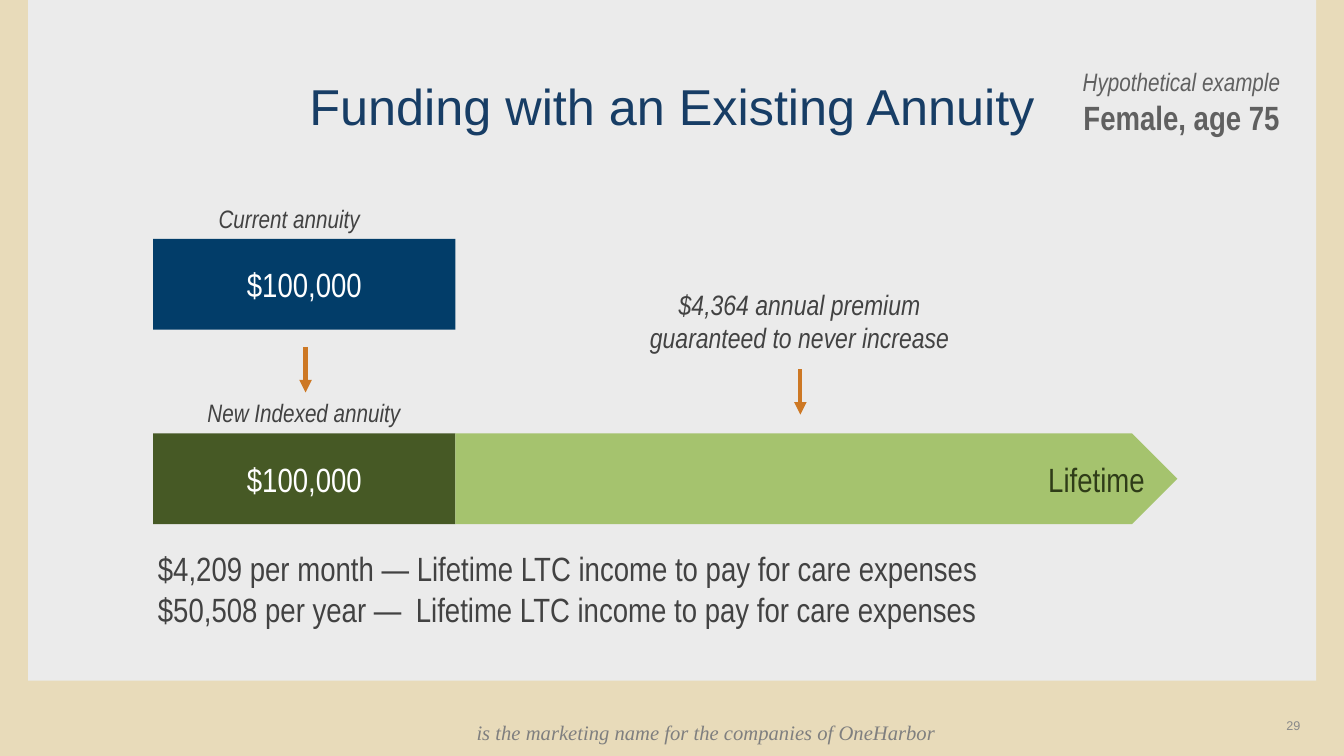
import pptx
import pptx.util
import pptx.dml.color
import pptx.enum.shapes
import pptx.enum.text
from lxml import etree
from pptx.util import Cm

ALIGN = pptx.enum.text.PP_ALIGN
ANCHOR = pptx.enum.text.MSO_ANCHOR
SHAPE = pptx.enum.shapes.MSO_SHAPE
NS = "http://schemas.openxmlformats.org/drawingml/2006/main"


def color(value):
    return pptx.dml.color.RGBColor.from_string(value)


def write(p, text, size=24, font="Arial Narrow", ink="424242", bold=False,
          italic=False, align=ALIGN.LEFT, tab=None):
    p.alignment = align
    if tab:
        tabs = etree.SubElement(p._p.get_or_add_pPr(), f"{{{NS}}}tabLst")
        etree.SubElement(tabs, f"{{{NS}}}tab", pos=str(int(Cm(tab))), algn="l")
    r = p.add_run()
    r.text = text
    r.font.size = pptx.util.Pt(size)
    r.font.name = font
    r.font.bold = bold
    r.font.italic = italic
    r.font.color.rgb = color(ink)


class Deck:
    accent = "CD7824"
    background = "E8DBBA"

    def __init__(self):
        self.prs = pptx.Presentation()
        self.prs.slide_width = Cm(33.87)
        self.prs.slide_height = Cm(19.05)
        self.s = self.prs.slides.add_slide(self.prs.slide_layouts[6])
        bg = self.s.background.fill
        bg.solid()
        bg.fore_color.rgb = color(self.background)

    def text(self, box, *lines, wrap=True, anchor=ANCHOR.TOP, grow=True):
        tf = self.s.shapes.add_textbox(*map(Cm, box)).text_frame
        tf.word_wrap = wrap
        tf.vertical_anchor = anchor
        if grow:
            tf.auto_size = pptx.enum.text.MSO_AUTO_SIZE.SHAPE_TO_FIT_TEXT
        for i, (text, style) in enumerate(lines):
            write(tf.add_paragraph() if i else tf.paragraphs[0], text, **style)

    def shape(self, kind, box, fill, text=None, **style):
        sp = self.s.shapes.add_shape(kind, *map(Cm, box))
        sp.shadow.inherit = False
        sp.fill.solid()
        sp.fill.fore_color.rgb = color(fill)
        sp.line.fill.background()
        if text:
            tf = sp.text_frame
            tf.word_wrap = True
            tf.vertical_anchor = ANCHOR.MIDDLE
            write(tf.paragraphs[0], text, **style)

    def arrow(self, x, top, length=1.15):
        cx = self.s.shapes.add_connector(
            pptx.enum.shapes.MSO_CONNECTOR.STRAIGHT,
            Cm(x), Cm(top), Cm(x), Cm(top + length))
        cx.line.color.rgb = color(self.accent)
        cx.line.width = pptx.util.Pt(3)
        spPr = cx._element.spPr
        etree.SubElement(spPr.get_or_add_ln(), f"{{{NS}}}tailEnd", type="triangle")
        etree.SubElement(spPr, f"{{{NS}}}effectLst")


def main():
    deck = Deck()
    bar_left, bar_width, bar_height = 3.86, 7.62, 2.29
    current_top, new_top = 6.02, 10.92
    label = dict(size=18, italic=True)
    premium = dict(size=20, italic=True, align=ALIGN.CENTER)
    example = dict(ink="606060", align=ALIGN.CENTER)

    deck.text((11.76, 18.01, 16.76, 0.89),
              ("is the marketing name for the companies of OneHarbor",
               dict(size=14.7, font="Times New Roman", ink="7F7F7F", italic=True)))
    deck.text((29.06, 17.58, 3.96, 1.02),
              ("29", dict(size=9, font="Arial", ink="898989", align=ALIGN.RIGHT)),
              anchor=ANCHOR.BOTTOM, grow=False)
    deck.shape(SHAPE.RECTANGLE, (0.71, 0, 32.46, 17.15), "EBEBEB")
    deck.text((1.7, 1.32, 30.48, 2.67),
              ("Funding with an Existing Annuity",
               dict(size=36, font="Arial", ink="173D65", align=ALIGN.CENTER)),
              anchor=ANCHOR.MIDDLE, grow=False)
    deck.text((26.09, 1.55, 7.37, 2.06),
              ("Hypothetical example", dict(example, size=18, italic=True)),
              ("Female, age 75", dict(example, bold=True)))

    for top, fill in ((current_top, "023D69"), (new_top, "465925")):
        deck.shape(SHAPE.RECTANGLE, (bar_left, top, bar_width, bar_height), fill,
                   "$100,000", ink="FFFFFF", align=ALIGN.CENTER)
    deck.shape(SHAPE.PENTAGON, (bar_left + bar_width, new_top, 18.19, bar_height),
               "A5C36E", "Lifetime", ink="2F3C18", align=ALIGN.RIGHT)

    deck.text((5.26, 5, 4.11, 1.02), ("Current annuity", label), wrap=False)
    deck.text((4.98, 9.88, 5.64, 1.02), ("New Indexed annuity", label), wrap=False)
    deck.text((16.1, 7.11, 8.1, 1.96),
              ("$4,364 annual premium", premium),
              ("guaranteed to never increase", premium), wrap=False)
    deck.arrow(7.7, 8.74)
    deck.arrow(20.17, 9.3)

    deck.text((3.73, 13.69, 29.64, 2.31),
              ("$4,209 per month — Lifetime LTC income to pay for care expenses", {}),
              ("$50,508 per year —\tLifetime LTC income to pay for care expenses",
               dict(tab=6.5)))
    deck.prs.save("out.pptx")


if __name__ == "__main__":
    main()
